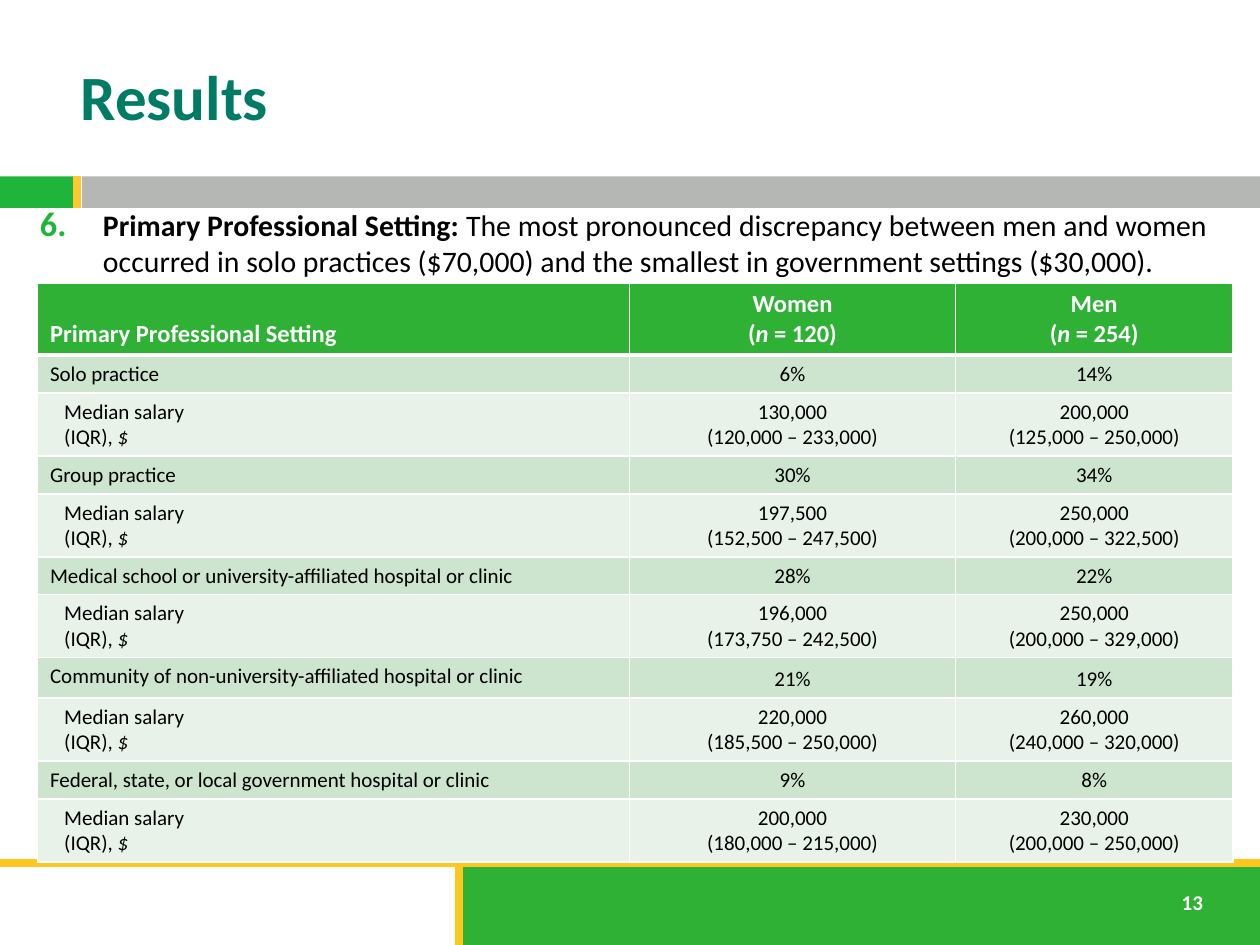
"""Build the results slide on salary by primary professional setting."""
import pptx
import pptx.util
import pptx.dml.color
import pptx.enum.shapes
import pptx.enum.text
import pptx.oxml

Pt = pptx.util.Pt
ALIGN = pptx.enum.text.PP_ALIGN
ANCHOR = pptx.enum.text.MSO_ANCHOR
NS = 'xmlns:a="http://schemas.openxmlformats.org/drawingml/2006/main"'
FONT = "Calibri"
COLORS = {
    "white": "FFFFFF", "black": "000000", "teal": "007C66", "lime": "1EB53A",
    "gray": "B5B7B4", "green": "2EB135", "gold": "FFC61E", "amber": "FFC82E",
    "band": "CDE4CE", "pale": "E8F2E8",
}

BARS = [
    ("white", 0, 97.2, 720, 25.2),
    ("lime", 0, 100.8, 41.8, 18),
    ("gray", 46.8, 100.8, 673.2, 18),
    ("white", 0.7, 490.3, 720, 47.5),
    ("green", 260.6, 492.5, 464.4, 50.4),
]
RULES = [
    ("gold", 0, 493.2, 720, 493.2),
    ("gold", 262.1, 493.9, 262.1, 540),
    ("amber", 43.9, 100.8, 43.9, 118.8),
]
TITLE = "Results"
PAGE = "13"
POINT = [
    ("Primary Professional Setting: ", "b"),
    ("The most pronounced discrepancy between men and women occurred in solo "
     "practices ($70,000) and the smallest in government settings ($30,000).", ""),
]
HEADING = "Primary Professional Setting"
GROUPS = [("Women", 120), ("Men", 254)]
SETTINGS = [
    ("Solo practice", ("6%", "130,000", "(120,000 – 233,000)"),
     ("14%", "200,000", "(125,000 – 250,000)")),
    ("Group practice", ("30%", "197,500", "(152,500 – 247,500)"),
     ("34%", "250,000", "(200,000 – 322,500)")),
    ("Medical school or university-affiliated hospital or clinic",
     ("28%", "196,000", "(173,750 – 242,500)"),
     ("22%", "250,000", "(200,000 – 329,000)")),
    ("Community of non-university-affiliated hospital or clinic",
     ("21%", "220,000", "(185,500 – 250,000)"),
     ("19%", "260,000", "(240,000 – 320,000)")),
    ("Federal, state, or local government hospital or clinic",
     ("9%", "200,000", "(180,000 – 215,000)"),
     ("8%", "230,000", "(200,000 – 250,000)")),
]
COLUMNS = [338.3, 186.4, 158.4]
HEADER_HEIGHT, SHARE_HEIGHT, SALARY_HEIGHT = 41, 21.6, 36
TALL_SETTING, TALL_HEIGHT = 3, 23


def rgb(name):
    return pptx.dml.color.RGBColor.from_string(COLORS[name])


def write(tf, paragraphs, size, color, bold=False, align=ALIGN.LEFT):
    """Fill a text frame with paragraphs of (text, style) runs."""
    for i, runs in enumerate(paragraphs):
        p = tf.paragraphs[0] if i == 0 else tf.add_paragraph()
        p.alignment = align
        for text, style in runs:
            r = p.add_run()
            r.text = text
            r.font.name, r.font.size = FONT, Pt(size)
            r.font.color.rgb = rgb(color)
            r.font.bold = bold or "b" in style
            r.font.italic = "i" in style


def set_borders(cell, top, bottom):
    tcPr = cell._tc.get_or_add_tcPr()
    for side, width in (("L", 1), ("R", 1), ("T", top), ("B", bottom)):
        tcPr.append(pptx.oxml.parse_xml(
            f'<a:ln{side} {NS} w="{Pt(width)}"><a:solidFill>'
            f'<a:srgbClr val="{COLORS["white"]}"/></a:solidFill></a:ln{side}>'))


def add_decoration(s):
    for color, *box in BARS:
        sp = s.shapes.add_shape(pptx.enum.shapes.MSO_SHAPE.RECTANGLE, *map(Pt, box))
        sp.shadow.inherit = False
        sp.fill.solid()
        sp.fill.fore_color.rgb = rgb(color)
        sp.line.fill.background()
    for color, *ends in RULES:
        line = s.shapes.add_connector(
            pptx.enum.shapes.MSO_CONNECTOR.STRAIGHT, *map(Pt, ends))
        line.line.color.rgb = rgb(color)
        line.line.width = Pt(4.5)
        line._element.spPr.append(pptx.oxml.parse_xml(f"<a:effectLst {NS}/>"))


def add_text(s):
    title = s.shapes.title
    title.left, title.top, title.width, title.height = map(Pt, (38.9, 15.8, 642.2, 77.8))
    title.text_frame.vertical_anchor = ANCHOR.MIDDLE
    write(title.text_frame, [[(TITLE, "")]], 36, "teal", bold=True)

    number = s.shapes.add_textbox(*map(Pt, (668.2, 504.7, 28.8, 21.6)))
    number.text_frame.word_wrap = False
    write(number.text_frame, [[(PAGE, "")]], 12, "white", bold=True)

    point = s.shapes.add_textbox(*map(Pt, (15.8, 114.5, 688.3, 54)))
    tf = point.text_frame
    tf.word_wrap = True
    pPr = tf.paragraphs[0]._p.get_or_add_pPr()
    pPr.set("marL", str(Pt(36)))
    pPr.set("indent", str(-Pt(36)))
    for bullet in (f'<a:buClr {NS}><a:srgbClr val="{COLORS["lime"]}"/></a:buClr>',
                   f'<a:buSzPct {NS} val="115000"/>',
                   f'<a:buFont {NS} typeface="{FONT}"/>',
                   f'<a:buAutoNum {NS} type="arabicPeriod" startAt="6"/>'):
        pPr.append(pptx.oxml.parse_xml(bullet))
    write(tf, [POINT], 17, "black")


def table_rows():
    """Return (kind, height, cells) for every row of the table."""
    header = [[[(HEADING, "")]]]
    for name, n in GROUPS:
        header.append([[(name, "")], [("(", ""), ("n", "i"), (f" = {n})", "")]])
    rows = [("header", HEADER_HEIGHT, header)]
    for i, (setting, *groups) in enumerate(SETTINGS):
        shares = [[[(setting, "")]]] + [[[(share, "")]] for share, _, _ in groups]
        salaries = [[[("Median salary", "")], [("(IQR), ", ""), ("$", "i")]]]
        salaries += [[[(median, "")], [(iqr, "")]] for _, median, iqr in groups]
        rows.append(("share", TALL_HEIGHT if i == TALL_SETTING else SHARE_HEIGHT, shares))
        rows.append(("salary", SALARY_HEIGHT, salaries))
    return rows


def add_salary_table(s):
    rows = table_rows()
    fills = {"header": "green", "share": "band", "salary": "pale"}
    height = sum(row[1] for row in rows)
    table = s.shapes.add_table(len(rows), len(COLUMNS), Pt(21.4), Pt(161.9),
                               Pt(sum(COLUMNS)), Pt(height)).table
    for column, width in zip(table.columns, COLUMNS):
        column.width = Pt(width)
    for i, (kind, row_height, cells) in enumerate(rows):
        table.rows[i].height = Pt(row_height)
        header = kind == "header"
        for j, paragraphs in enumerate(cells):
            cell = table.cell(i, j)
            set_borders(cell, 3 if i == 1 else 1, 3 if header else 1)
            cell.fill.solid()
            cell.fill.fore_color.rgb = rgb(fills[kind])
            if (header and j == 0) or (kind == "share" and j > 0):
                cell.vertical_anchor = ANCHOR.BOTTOM
            if kind == "salary" and j == 0:
                cell.margin_left = Pt(15.3)
            write(cell.text_frame, paragraphs, 14 if header else 12,
                  "white" if header else "black", header,
                  ALIGN.CENTER if j else ALIGN.LEFT)


def main():
    prs = pptx.Presentation()
    prs.slide_width, prs.slide_height = Pt(720), Pt(540)
    s = prs.slides.add_slide(prs.slide_layouts[5])
    add_decoration(s)
    add_text(s)
    add_salary_table(s)
    prs.save("out.pptx")


if __name__ == "__main__":
    main()
